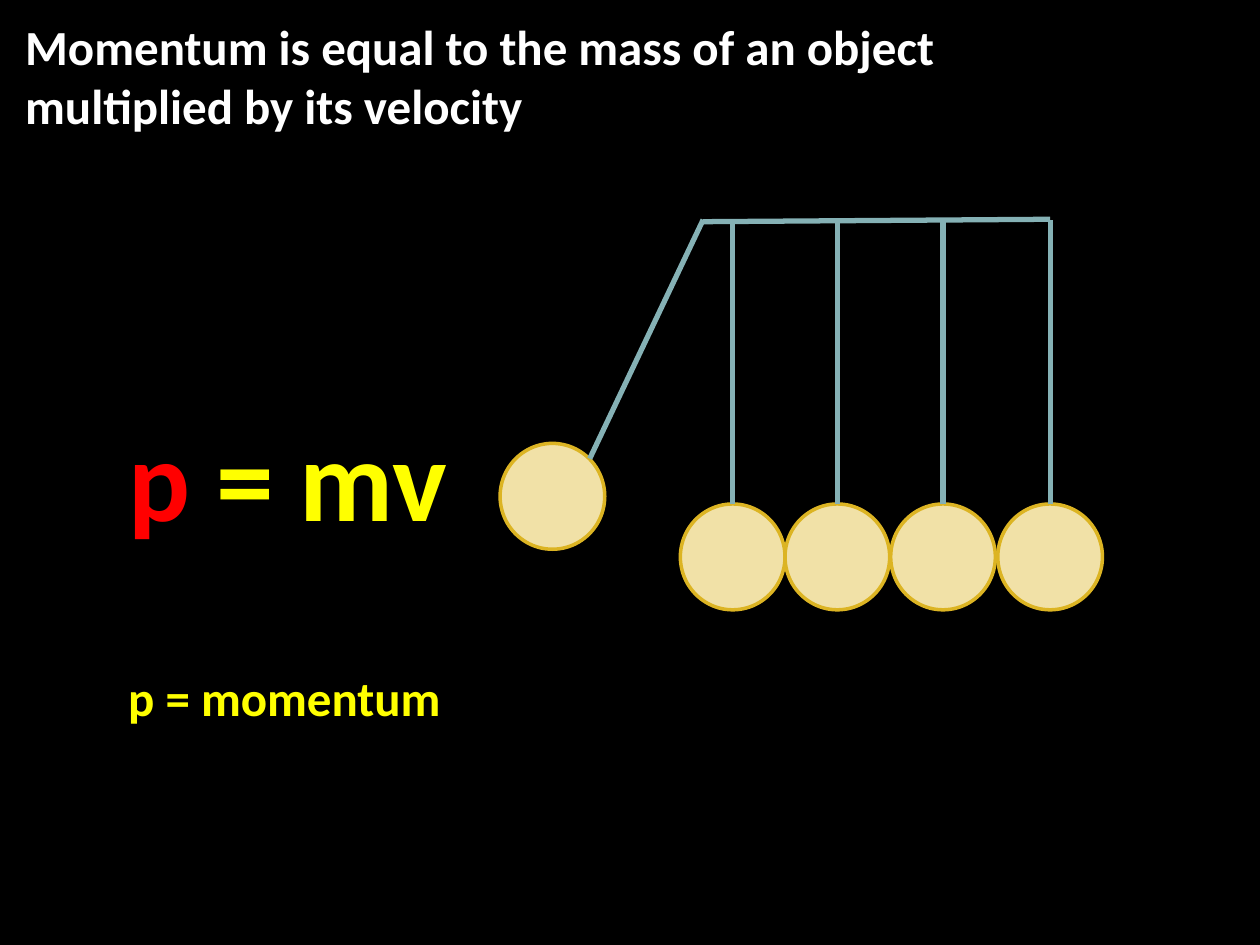
from lxml import etree
from pptx import Presentation
from pptx.dml.color import RGBColor
from pptx.enum.shapes import MSO_CONNECTOR, MSO_SHAPE
from pptx.enum.text import MSO_ANCHOR, MSO_AUTO_SIZE, PP_ALIGN
from pptx.oxml.ns import qn
from pptx.util import Pt

STRAIGHT = MSO_CONNECTOR.STRAIGHT
OVAL = MSO_SHAPE.OVAL
LEFT = PP_ALIGN.LEFT
MIDDLE = MSO_ANCHOR.MIDDLE
NO_AUTOFIT = MSO_AUTO_SIZE.NONE
GROW = MSO_AUTO_SIZE.SHAPE_TO_FIT_TEXT

BLACK, WHITE, RED, YELLOW = "000000", "FFFFFF", "FF0000", "FFFF00"
BALL_FILL, BALL_LINE, STRING = "F1E1A7", "DCB423", "85B1B5"
BALL_W, BALL_H = 59.8, 60.5
BALL_TOP, BAR_TOP, BAR_LEFT = 288, 125.6, 401.8
BALL_LEFTS = (388.8, 448.6, 509, 570.2)


def rgb(color):
    """Turn a hex string into a colour."""
    return RGBColor.from_string(color)


def add_text(p, text, size=28, color=WHITE, bold=True, font="Calibri"):
    """Append a formatted run to a paragraph."""
    r = p.add_run()
    r.text = text
    r.font.size = Pt(size)
    r.font.bold = bold
    r.font.name = font
    r.font.color.rgb = rgb(color)


def set_title(slide, lines):
    """Place the title and write its lines."""
    sp = slide.shapes.title
    sp.left, sp.top, sp.width, sp.height = Pt(7.2), Pt(5.8), Pt(707), Pt(74.9)
    tf = sp.text_frame
    tf.word_wrap = True
    tf.auto_size = NO_AUTOFIT
    tf.vertical_anchor = MIDDLE
    p = tf.paragraphs[0]
    p.alignment = LEFT
    for i, line in enumerate(lines):
        if i:
            p.add_line_break()
        add_text(p, line)


def add_label(slide, top, width, height, parts, size):
    """Add a half-transparent black label made of coloured parts."""
    sp = slide.shapes.add_textbox(Pt(66.2), Pt(top), Pt(width), Pt(height))
    sp.fill.solid()
    sp.fill.fore_color.rgb = rgb(BLACK)
    clr = next(sp.fill._xPr.iter(qn("a:srgbClr")))
    etree.SubElement(clr, qn("a:alpha"), val="50000")
    tf = sp.text_frame
    tf.word_wrap = False
    tf.auto_size = GROW
    for text, color in parts:
        add_text(tf.paragraphs[0], text, size=size, color=color)


def add_ball(slide, left, top):
    """Add one ball of the cradle."""
    sp = slide.shapes.add_shape(OVAL, Pt(left), Pt(top), Pt(BALL_W), Pt(BALL_H))
    sp.shadow.inherit = False
    sp.fill.solid()
    sp.fill.fore_color.rgb = rgb(BALL_FILL)
    sp.line.color.rgb = rgb(BALL_LINE)
    sp.line.width = Pt(2)


def add_line(slide, x1, y1, x2, y2):
    """Add one straight string or bar."""
    cxn = slide.shapes.add_connector(STRAIGHT, Pt(x1), Pt(y1), Pt(x2), Pt(y2))
    cxn.line.color.rgb = rgb(STRING)
    cxn.line.width = Pt(3)
    etree.SubElement(cxn._element.spPr, qn("a:effectLst"))


def add_cradle(slide):
    """Draw the raised ball, the hanging balls, their strings and the bar."""
    add_ball(slide, 285.8, 253.4)
    for left in BALL_LEFTS:
        add_ball(slide, left, BALL_TOP)
    add_line(slide, 337, 262.1, BAR_LEFT, BAR_TOP)
    centers = [left + BALL_W / 2 for left in BALL_LEFTS]
    for x in centers:
        add_line(slide, x, BALL_TOP, x, BAR_TOP)
    add_line(slide, BAR_LEFT, 126.7, centers[-1], 125.3)


def main():
    """Build the momentum slide."""
    prs = Presentation()
    prs.slide_width, prs.slide_height = Pt(720), Pt(540)
    slide = prs.slides.add_slide(prs.slide_layouts[5])
    slide.background.fill.solid()
    slide.background.fill.fore_color.rgb = rgb(BLACK)
    set_title(slide, ("Momentum is equal to the mass of an object ",
                      "multiplied by its velocity"))
    add_label(slide, 228.2, 198, 87.1, (("p ", RED), ("= mv", YELLOW)), 66)
    add_label(slide, 378, 195.1, 41, (("p = momentum", YELLOW),), 28)
    add_cradle(slide)
    prs.save("out.pptx")


if __name__ == "__main__":
    main()
